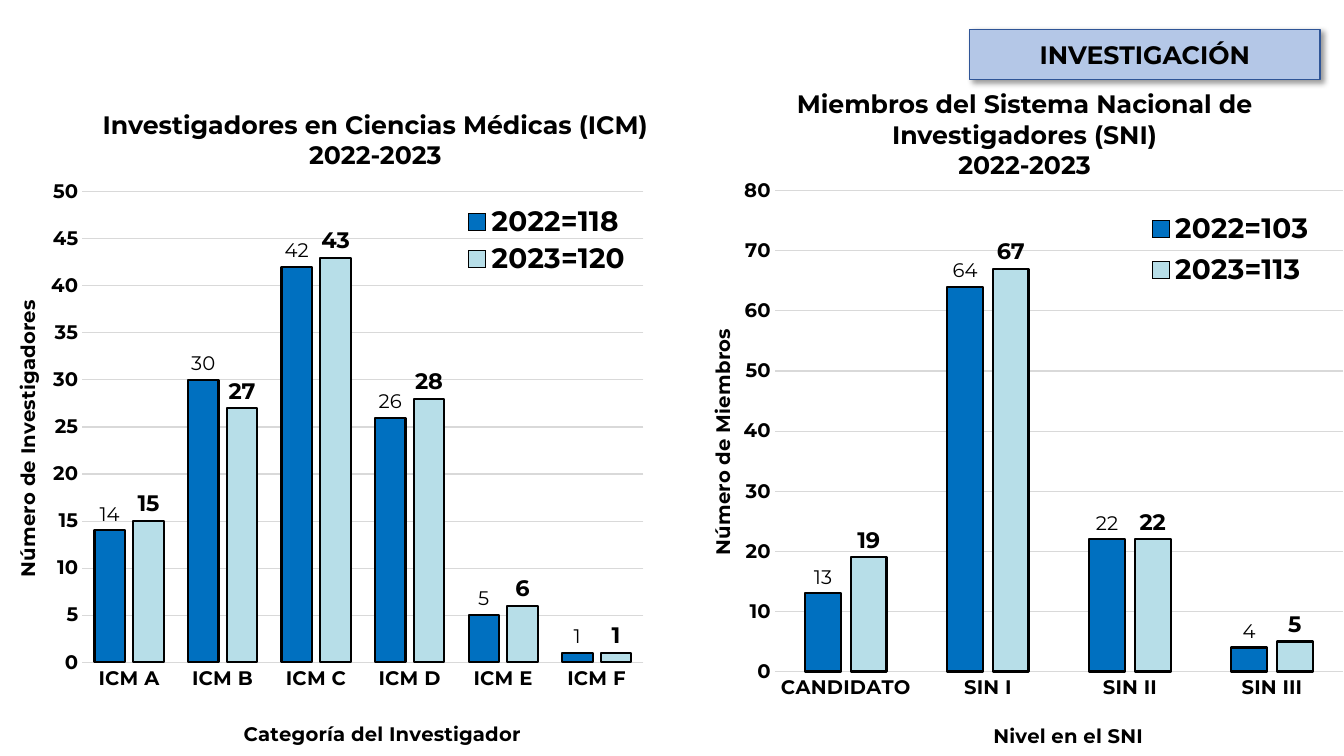
"""Build the research slide: two column charts of investigators for 2022 and 2023."""
import pptx
import pptx.chart.data
import pptx.dml.color
import pptx.enum.chart
import pptx.enum.text
import pptx.oxml
import pptx.oxml.ns
import pptx.util
from pptx.util import Cm, Pt

HUES = {"black": "000000", "blue": "0070C0", "pale": "B7DEE8",
        "grid": "D9D9D9", "badge": "B4C7E7", "edge": "2F5597"}
RGB = {name: pptx.dml.color.RGBColor.from_string(hue) for name, hue in HUES.items()}
NS = pptx.oxml.ns.nsdecls
QN = pptx.oxml.ns.qn


def style(font, size, bold=True):
    font.name = "Montserrat"
    font.size = Pt(size)
    font.bold = bold
    font.color.rgb = RGB["black"]


def place(node, inner=False, **spots):
    for old in node.findall(QN("c:layout")):
        node.remove(old)
    target = '<c:layoutTarget val="inner"/>' if inner else ""
    modes = "".join(f'<c:{key}Mode val="edge"/>' for key in "xy")
    sizes = "".join(f'<c:{key} val="{val}"/>' for key, val in spots.items())
    layout = pptx.oxml.parse_xml(
        f'<c:layout {NS("c")}><c:manualLayout>{target}{modes}{sizes}'
        '</c:manualLayout></c:layout>')
    overlay = node.find(QN("c:overlay"))
    if overlay is None:
        node.insert(0, layout)
    else:
        overlay.addprevious(layout)


deck = pptx.Presentation()
deck.slide_width, deck.slide_height = Cm(33.87), Cm(19.05)
slide = deck.slides.add_slide(deck.slide_layouts[5])

badge = slide.shapes.title
badge.left, badge.top, badge.width, badge.height = Cm(24.43), Cm(0.74), Cm(8.84), Cm(1.27)
props = badge._element.spPr
props.append(pptx.oxml.parse_xml(
    f'<a:prstGeom {NS("a")} prst="roundRect"><a:avLst/></a:prstGeom>'))
badge.fill.solid()
badge.fill.fore_color.rgb = RGB["badge"]
badge.line.color.rgb = RGB["edge"]
badge.line.width = Pt(1)
props.append(pptx.oxml.parse_xml(
    f'<a:effectLst {NS("a")}><a:outerShdw blurRad="50800" dist="38100" dir="2700000" '
    f'algn="tl" rotWithShape="0"><a:srgbClr val="{HUES["black"]}"><a:alpha val="40000"/>'
    '</a:srgbClr></a:outerShdw></a:effectLst>'))
frame = badge.text_frame
frame.text = "INVESTIGACIÓN"
frame.auto_size = pptx.enum.text.MSO_AUTO_SIZE.NONE
frame.vertical_anchor = pptx.enum.text.MSO_ANCHOR.MIDDLE
frame.paragraphs[0].alignment = pptx.enum.text.PP_ALIGN.CENTER
style(frame.paragraphs[0].runs[0].font, 18)

panels = [
    {"head": "Investigadores en Ciencias Médicas (ICM)", "box": (1.75, 2.62, 15.42, 1.8),
     "left": 0, "cats": ["ICM A", "ICM B", "ICM C", "ICM D", "ICM E", "ICM F"],
     "data": {"2022=118": [14, 30, 42, 26, 5, 1], "2023=120": [15, 27, 43, 28, 6, 1]},
     "top": 50, "step": 5, "gap": 80,
     "plot": {"x": 0.128, "y": 0.037, "w": 0.872, "h": 0.803},
     "key": {"x": 0.72, "y": 0.055, "w": 0.26, "h": 0.13},
     "names": [("Categoría del Investigador", 0.373, 0.933),
               ("Número de Investigadores", 0.016, 0.215)]},
    {"head": "Miembros del Sistema Nacional de Investigadores (SNI)",
     "box": (18.57, 2.11, 14.5, 2.57),
     "left": 17.63, "cats": ["CANDIDATO", "SIN I", "SIN II", "SIN III"],
     "data": {"2022=103": [13, 64, 22, 4], "2023=113": [19, 67, 22, 5]},
     "top": 80, "step": 10, "gap": 170,
     "plot": {"x": 0.117, "y": 0.035, "w": 0.883, "h": 0.821},
     "key": {"x": 0.69, "y": 0.06, "w": 0.27, "h": 0.15},
     "names": [("Nivel en el SNI", 0.451, 0.936),
               ("Número de Miembros", 0.009, 0.264)]},
]

for panel in panels:
    head = slide.shapes.add_textbox(*map(Cm, panel["box"])).text_frame
    head.word_wrap = True
    head.text = panel["head"] + "\n2022-2023"
    for para in head.paragraphs:
        para.alignment = pptx.enum.text.PP_ALIGN.CENTER
        style(para.runs[0].font, 18)

    data = pptx.chart.data.CategoryChartData()
    data.categories = panel["cats"]
    for name, vals in panel["data"].items():
        data.add_series(name, vals)
    chart = slide.shapes.add_chart(
        pptx.enum.chart.XL_CHART_TYPE.COLUMN_CLUSTERED,
        Cm(panel["left"]), Cm(4.29), Cm(16.23), Cm(14.76), data).chart
    style(chart.font, 10, False)
    chart.has_title = False
    place(chart._chartSpace.chart.plotArea, inner=True, **panel["plot"])

    chart.has_legend = True
    chart.legend.position = pptx.enum.chart.XL_LEGEND_POSITION.BOTTOM
    chart.legend.include_in_layout = False
    style(chart.legend.font, 20)
    place(chart.legend._element, **panel["key"])

    plot = chart.plots[0]
    plot.vary_by_categories = False
    plot.gap_width, plot.overlap = panel["gap"], -27
    for series, hue, size, bold in zip(plot.series, ("blue", "pale"), (14, 16), (False, True)):
        series.format.fill.solid()
        series.format.fill.fore_color.rgb = RGB[hue]
        series.format.line.color.rgb = RGB["black"]
        series.format.line.width = Pt(1.5)
        labels = series.data_labels
        labels.show_value = True
        labels.position = pptx.enum.chart.XL_LABEL_POSITION.OUTSIDE_END
        style(labels.font, size, bold)

    cat, val = chart.category_axis, chart.value_axis
    for axis, (name, x, y) in zip((cat, val), panel["names"]):
        axis.major_tick_mark = pptx.enum.chart.XL_TICK_MARK.NONE
        axis.minor_tick_mark = pptx.enum.chart.XL_TICK_MARK.NONE
        style(axis.tick_labels.font, 14)
        text = axis.axis_title.text_frame
        text.text = name
        style(text.paragraphs[0].runs[0].font, 14)
        place(axis.axis_title._element, x=x, y=y)
    turn = val.axis_title.text_frame._txBody.bodyPr
    turn.set("rot", "-5400000")
    turn.set("vert", "horz")

    val.minimum_scale, val.maximum_scale = 0, panel["top"]
    val.major_unit = panel["step"]
    val.format.line.fill.background()
    for line in (cat.format.line, val.major_gridlines.format.line):
        line.color.rgb = RGB["grid"]
        line.width = Pt(0.75)

deck.save("out.pptx")
